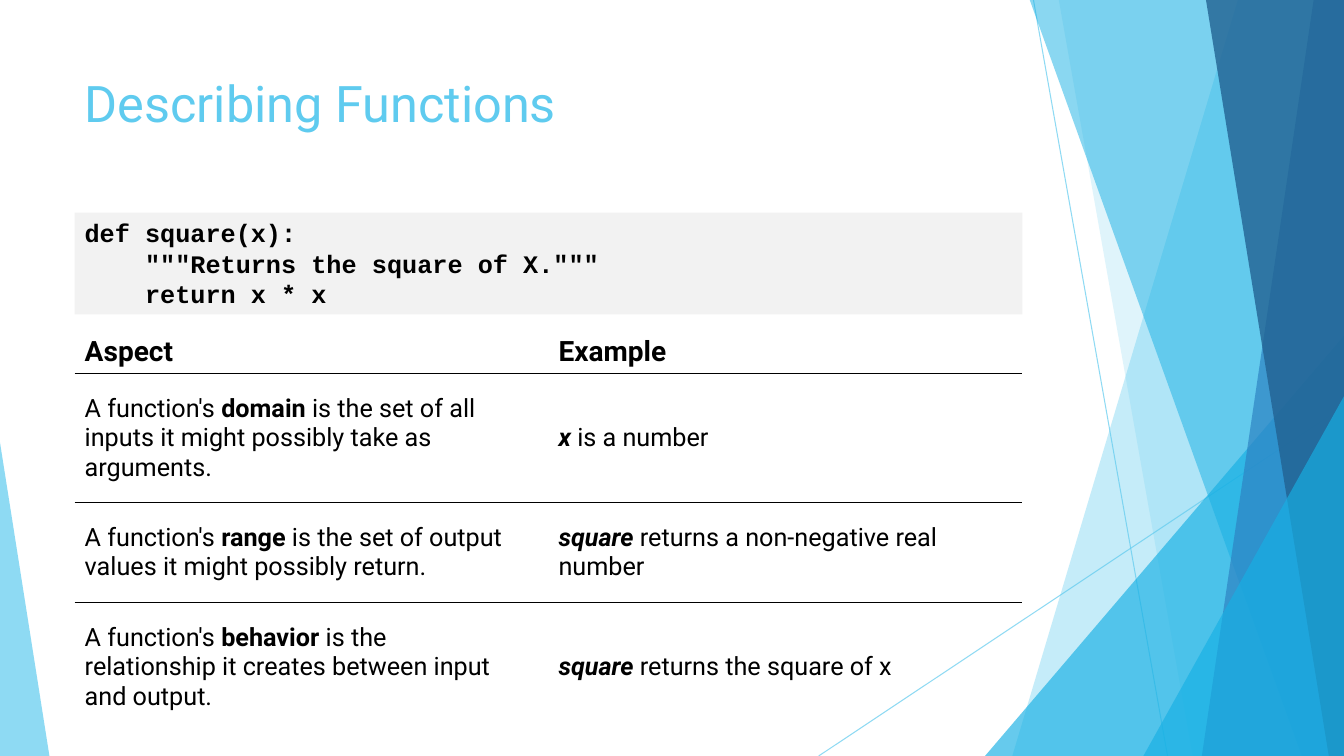
from lxml import etree
from pptx import Presentation
from pptx.dml.color import RGBColor
from pptx.enum.shapes import MSO_CONNECTOR, MSO_SHAPE
from pptx.enum.text import MSO_ANCHOR, MSO_AUTO_SIZE, PP_ALIGN
from pptx.oxml.ns import qn
from pptx.util import Inches, Pt

STRAIGHT = MSO_CONNECTOR.STRAIGHT
RECTANGLE = MSO_SHAPE.RECTANGLE
TRIANGLE = MSO_SHAPE.ISOSCELES_TRIANGLE
TOP, MIDDLE = MSO_ANCHOR.TOP, MSO_ANCHOR.MIDDLE
LEFT = PP_ALIGN.LEFT
NO_AUTOFIT = MSO_AUTO_SIZE.NONE

SKY = RGBColor(0x5F, 0xCB, 0xEF)
CYAN = RGBColor(0x17, 0xB0, 0xE4)
BLUE = RGBColor(0x2E, 0x83, 0xC3)
NAVY = RGBColor(0x22, 0x62, 0x92)
BLACK = RGBColor(0, 0, 0)
CODE_GRAY = RGBColor(0xF2, 0xF2, 0xF2)

TEXT_FONT, CODE_FONT = "Roboto", "Courier New"
SLIDE_W, SLIDE_H = 13.33, 7.5
BAND_TOP = -0.01
CONTENT_LEFT, CONTENT_W = 0.74, 9.4

# Facet lines: start x, start y, end x, end y
RAYS = [(10.25, 0, 11.58, 7.5), (13.33, 4.03, 8.12, 7.5)]
# Bands reaching the right edge: top x, bottom x, colour, opacity in percent
BANDS_BACK = [(12.28, 10.04, SKY, 36), (10.5, 11.83, SKY, 20)]
BANDS_FRONT = [(10.21, 12.91, CYAN, 50), (13.03, 11.92, BLUE, 70),
               (11.96, 13.18, NAVY, 80)]

CODE = ["def square(x):",
        '    """Returns the square of X."""',
        "    return x * x"]

HEADINGS = ["Aspect", "Example"]
# Each cell is a list of (text, bold, italic)
ASPECTS = [
    ([("A function's ", False, False), ("domain", True, False),
      (" is the set of all inputs it might possibly take as arguments.", False, False)],
     [("x", True, True), (" is a number", False, False)]),
    ([("A function's ", False, False), ("range", True, False),
      (" is the set of output values it might possibly return.", False, False)],
     [("square", True, True), (" returns a non-negative real number", False, False)]),
    ([("A function's ", False, False), ("behavior", True, False),
      (" is the relationship it creates between input and output.", False, False)],
     [("square", True, True), (" returns the square of x", False, False)]),
]
ROW_HEIGHTS = [0.42, 1.28, 0.99, 1.28]


def set_alpha(fill_parent, percent):
    color = next(fill_parent.iter(qn("a:srgbClr")))
    etree.SubElement(color, qn("a:alpha"), val=str(percent * 1000))


def set_font(paragraph, name, size, color, bold=None):
    font = paragraph.font
    font.name, font.size, font.bold = name, Pt(size), bold
    font.color.rgb = color


def fill_facet(facet, color, opacity):
    facet.shadow.inherit = False
    facet.fill.solid()
    facet.fill.fore_color.rgb = color
    set_alpha(facet.fill._xPr, opacity)
    facet.line.fill.background()


def add_ray(slide, x1, y1, x2, y2):
    ray = slide.shapes.add_connector(
        STRAIGHT, Inches(x1), Inches(y1), Inches(x2), Inches(y2))
    ray.line.color.rgb = SKY
    ray.line.width = Pt(0.75)
    properties = ray._element.spPr
    set_alpha(properties, 70)
    etree.SubElement(properties, qn("a:effectLst"))


def add_band(slide, top_x, bottom_x, color, opacity):
    outline = slide.shapes.build_freeform(Inches(top_x), Inches(BAND_TOP))
    corners = [(SLIDE_W, BAND_TOP), (SLIDE_W, SLIDE_H), (bottom_x, SLIDE_H)]
    outline.add_line_segments([(Inches(x), Inches(y)) for x, y in corners])
    fill_facet(outline.convert_to_shape(), color, opacity)


def add_corner(slide, left, top, width, apex, color, opacity):
    corner = slide.shapes.add_shape(
        TRIANGLE, Inches(left), Inches(top), Inches(width), Inches(SLIDE_H - top))
    corner.adjustments[0] = apex
    fill_facet(corner, color, opacity)


def add_facets(slide):
    for ray in RAYS:
        add_ray(slide, *ray)
    for band in BANDS_BACK:
        add_band(slide, *band)
    add_corner(slide, 9.77, 3.33, 3.56, 1, CYAN, 66)
    for band in BANDS_FRONT:
        add_band(slide, *band)
    add_corner(slide, 11.34, 3.93, 1.99, 1, CYAN, 66)
    add_corner(slide, 0, 4.39, 0.49, 0, SKY, 70)


def add_title(slide, text):
    title = slide.shapes.title
    title.left, title.top = Inches(CONTENT_LEFT), Inches(0.67)
    title.width, title.height = Inches(CONTENT_W), Inches(1.44)
    frame = title.text_frame
    frame.text = text
    frame.vertical_anchor = TOP
    frame.auto_size = NO_AUTOFIT
    frame.paragraphs[0].alignment = LEFT
    set_font(frame.paragraphs[0], TEXT_FONT, 36, SKY)


def add_code(slide, lines):
    panel = slide.shapes.add_shape(
        RECTANGLE, Inches(CONTENT_LEFT), Inches(2.11), Inches(CONTENT_W), Inches(1.01))
    panel.shadow.inherit = False
    panel.fill.solid()
    panel.fill.fore_color.rgb = CODE_GRAY
    panel.line.fill.background()
    frame = panel.text_frame
    frame.word_wrap = True
    frame.vertical_anchor = TOP
    frame.text = "\n".join(lines)
    for paragraph in frame.paragraphs:
        paragraph.alignment = LEFT
        set_font(paragraph, CODE_FONT, 18, BLACK, True)


def set_borders(cell, ruled_sides):
    properties = cell._tc.get_or_add_tcPr()
    for side in ("L", "R", "T", "B"):
        border = etree.SubElement(properties, qn(f"a:ln{side}"), w=str(Pt(1)))
        if side in ruled_sides:
            fill = etree.SubElement(border, qn("a:solidFill"))
            etree.SubElement(fill, qn("a:srgbClr"), val=str(BLACK))
        else:
            etree.SubElement(border, qn("a:noFill"))


def fill_aspect_cell(cell, runs, right_margin):
    cell.vertical_anchor = MIDDLE
    cell.margin_top = cell.margin_bottom = Inches(0.2)
    cell.margin_right = Inches(right_margin)
    paragraph = cell.text_frame.paragraphs[0]
    set_font(paragraph, TEXT_FONT, 18, BLACK)
    for text, bold, italic in runs:
        run = paragraph.add_run()
        run.text = text
        run.font.bold, run.font.italic = bold, italic


def add_aspect_table(slide):
    table = slide.shapes.add_table(
        len(ROW_HEIGHTS), len(HEADINGS), Inches(CONTENT_LEFT), Inches(3.28),
        Inches(CONTENT_W), Inches(sum(ROW_HEIGHTS))).table
    table.first_row = table.horz_banding = False
    for row, height in zip(table.rows, ROW_HEIGHTS):
        row.height = Inches(height)

    # Rules only between rows
    last = len(ROW_HEIGHTS) - 1
    for index, row in enumerate(table.rows):
        sides = ("T" if index > 0 else "") + ("B" if index < last else "")
        for cell in row.cells:
            set_borders(cell, sides)
            cell.fill.background()

    for cell, heading in zip(table.rows[0].cells, HEADINGS):
        cell.text = heading
        set_font(cell.text_frame.paragraphs[0], TEXT_FONT, 20, BLACK, True)
    for index, (aspect, example) in enumerate(ASPECTS, start=1):
        fill_aspect_cell(table.cell(index, 0), aspect, 0.3)
        fill_aspect_cell(table.cell(index, 1), example, 0.1)


def main():
    deck = Presentation()
    deck.slide_width, deck.slide_height = Inches(SLIDE_W), Inches(SLIDE_H)
    slide = deck.slides.add_slide(deck.slide_layouts[5])
    add_facets(slide)
    add_title(slide, "Describing Functions")
    add_aspect_table(slide)
    add_code(slide, CODE)
    deck.save("out.pptx")


if __name__ == "__main__":
    main()
